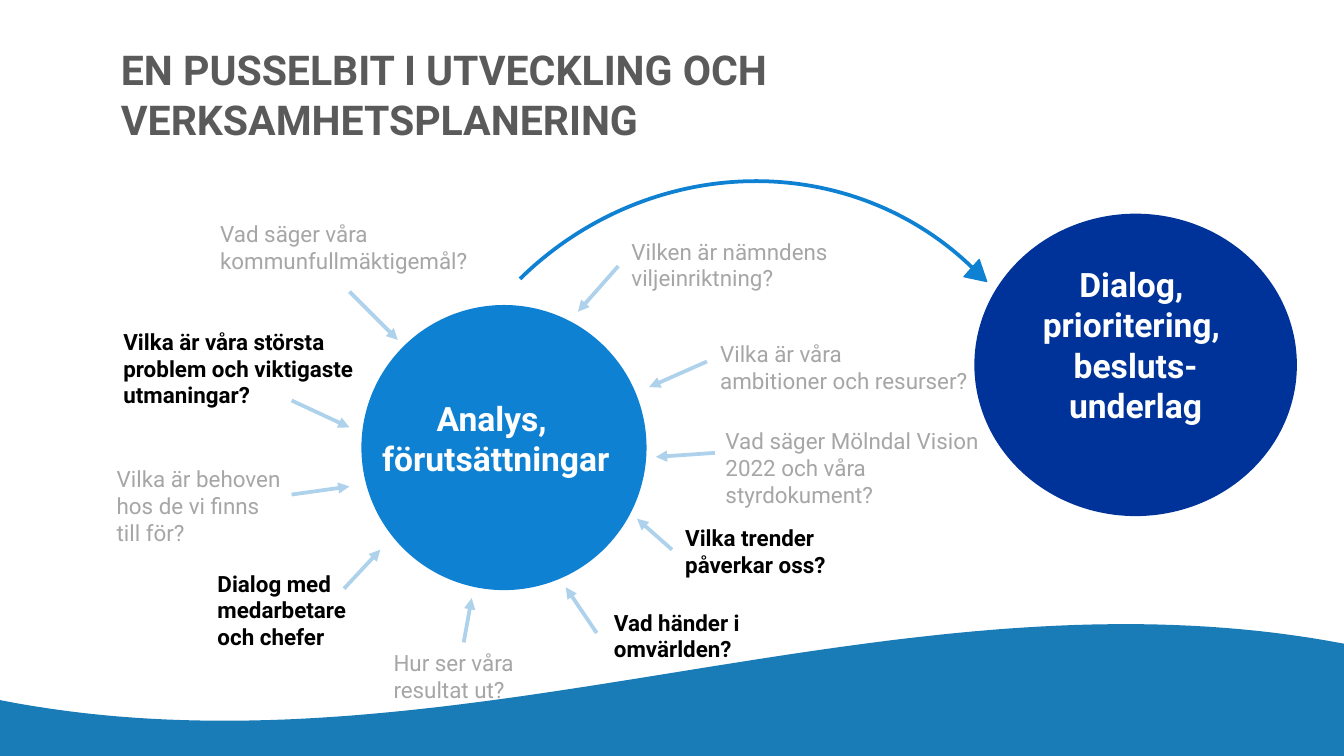
from typing import NamedTuple

from pptx import Presentation
from pptx.dml.color import RGBColor
from pptx.enum.shapes import MSO_CONNECTOR, MSO_SHAPE as Shp
from pptx.enum.text import MSO_ANCHOR, MSO_AUTO_SIZE, PP_ALIGN
from pptx.oxml.ns import qn
from pptx.util import Emu, Pt
from lxml.etree import SubElement

SCALE = 4572
WIDTH, HEIGHT = 2000, 1125
FONT = "Roboto"
BLUE, NAVY, PALE, WAVE = "0F81D3", "003399", "AED1EC", "1A7CB7"
WHITE, BLACK, GREY, TITLE = "FFFFFF", "000000", "A6A6A6", "5A5A5A"


class Question(NamedTuple):
    text: str
    x: int
    y: int
    w: int
    h: int
    strong: bool = False


class Arrow(NamedTuple):
    x1: int
    y1: int
    x2: int
    y2: int


QUESTIONS = [
    Question("Vad säger våra kommunfullmäktigemål?", 308, 318, 466, 100),
    Question("Vilka är våra största problem och viktigaste utmaningar?",
             164, 478, 412, 142, True),
    Question("Vilka är behoven hos de vi finns till för?", 154, 682, 292, 142),
    Question("Dialog med medarbetare och chefer", 304, 838, 292, 146, True),
    Question("Hur ser våra resultat ut?", 566, 956, 248, 100),
    Question("Vad händer i omvärlden?", 894, 896, 388, 100, True),
    Question("Vilka trender påverkar oss?", 1000, 770, 346, 100, True),
    Question("Vad säger Mölndal Vision 2022 och våra styrdokument?", 1060, 626, 460, 142),
    Question("Vilka är våra \vambitioner och resurser?", 1052, 496, 948, 100),
    Question("Vilken är nämndens viljeinriktning?", 920, 344, 456, 100),
]

ARROWS = [
    Arrow(520, 434, 592, 506),
    Arrow(434, 596, 520, 636),
    Arrow(512, 876, 566, 818),
    Arrow(434, 736, 520, 724),
    Arrow(690, 956, 702, 890),
    Arrow(888, 942, 842, 874),
    Arrow(1000, 818, 948, 772),
    Arrow(1064, 674, 976, 680),
    Arrow(1052, 538, 966, 576),
    Arrow(920, 396, 860, 464),
]


def px(n: float) -> Emu:
    return Emu(round(n * SCALE))


def rgb(color: str) -> RGBColor:
    return RGBColor.from_string(color)


def box(x: int, y: int, w: int, h: int) -> tuple:
    return px(x), px(y), px(w), px(h)


def write(tf, lines: list[str], size: int, color: str, bold: bool, align=PP_ALIGN.LEFT) -> None:
    tf.text = "\n".join(lines)
    for p in tf.paragraphs:
        p.alignment = align
        p.font.name, p.font.size, p.font.bold = FONT, Pt(size), bold
        p.font.color.rgb = rgb(color)


def paint(sp, fill: str | None, line: str | None = None, width: float = 0) -> None:
    sp.shadow.inherit = False
    if fill:
        sp.fill.solid()
        sp.fill.fore_color.rgb = rgb(fill)
    else:
        sp.fill.background()
    if line:
        sp.line.color.rgb = rgb(line)
        sp.line.width = Pt(width)
    else:
        sp.line.fill.background()


def add_text(s, x: int, y: int, w: int, h: int, lines: list[str], size: int,
             color: str, bold: bool, align=PP_ALIGN.LEFT) -> None:
    tf = s.shapes.add_textbox(*box(x, y, w, h)).text_frame
    tf.word_wrap = True
    tf.auto_size = MSO_AUTO_SIZE.SHAPE_TO_FIT_TEXT
    write(tf, lines, size, color, bold, align)


def add_question(s, q: Question) -> None:
    add_text(s, q.x, q.y, q.w, q.h, [q.text], 12, BLACK if q.strong else GREY, q.strong)


def add_arrow(s, a: Arrow) -> None:
    c = s.shapes.add_connector(MSO_CONNECTOR.STRAIGHT, px(a.x1), px(a.y1), px(a.x2), px(a.y2))
    c.line.color.rgb = rgb(PALE)
    c.line.width = Pt(2)
    SubElement(c.line._get_or_add_ln(), qn("a:tailEnd"), type="triangle")
    SubElement(c._element.spPr, qn("a:effectLst"))


def add_wave(s, steps: int = 80) -> None:
    curve = [(2000, 958), (1328, 830), (672, 1174), (0, 1042)]
    points = []
    for i in range(steps + 1):
        t = i / steps
        weights = ((1 - t) ** 3, 3 * t * (1 - t) ** 2, 3 * t * t * (1 - t), t ** 3)
        points.append(tuple(px(sum(k * c[axis] for k, c in zip(weights, curve)))
                            for axis in (0, 1)))
    fb = s.shapes.build_freeform(*points[0], scale=1.0)
    fb.add_line_segments(points[1:] + [(px(0), px(HEIGHT)), (px(WIDTH), px(HEIGHT))])
    paint(fb.convert_to_shape(), WAVE)


def add_title(s) -> None:
    sp = s.shapes.title
    sp.left, sp.top, sp.width, sp.height = box(160, 46, 1748, 188)
    tf = sp.text_frame
    tf.word_wrap = True
    tf.auto_size = MSO_AUTO_SIZE.NONE
    tf.vertical_anchor = MSO_ANCHOR.MIDDLE
    write(tf, ["EN PUSSELBIT I UTVECKLING OCH VERKSAMHETSPLANERING"], 22, TITLE, True)


def add_analysis(s) -> None:
    paint(s.shapes.add_shape(Shp.OVAL, *box(542, 458, 416, 416)), BLUE, BLUE, 3)
    add_text(s, 238, 582, 1000, 142, ["Analys, ", "förutsättningar"], 18, WHITE, True,
             PP_ALIGN.CENTER)


def add_swing(s) -> None:
    arc = s.shapes.add_shape(Shp.ARC, *box(612, 280, 984, 942))
    arc.rotation = 315.5
    paint(arc, None, BLUE, 2)
    head = s.shapes.add_shape(Shp.ISOSCELES_TRIANGLE, *box(1440, 394, 34, 30))
    head.rotation = 131.5
    paint(head, BLUE, BLUE, 0.75)


def add_dialog(s) -> None:
    sp = s.shapes.add_shape(Shp.OVAL, *box(1450, 318, 480, 450))
    paint(sp, NAVY)
    tf = sp.text_frame
    tf.word_wrap = False
    tf.vertical_anchor = MSO_ANCHOR.MIDDLE
    tf.margin_bottom = px(70)
    write(tf, ["Dialog, ", "prioritering, ", "besluts-", "underlag"], 18, WHITE, True,
          PP_ALIGN.CENTER)


def main() -> None:
    prs = Presentation()
    prs.slide_width, prs.slide_height = px(WIDTH), px(HEIGHT)
    s = prs.slides.add_slide(prs.slide_layouts[5])
    add_wave(s)
    add_title(s)
    for q in QUESTIONS:
        add_question(s, q)
    add_analysis(s)
    for a in ARROWS:
        add_arrow(s, a)
    add_swing(s)
    add_dialog(s)
    prs.save("out.pptx")


if __name__ == "__main__":
    main()
